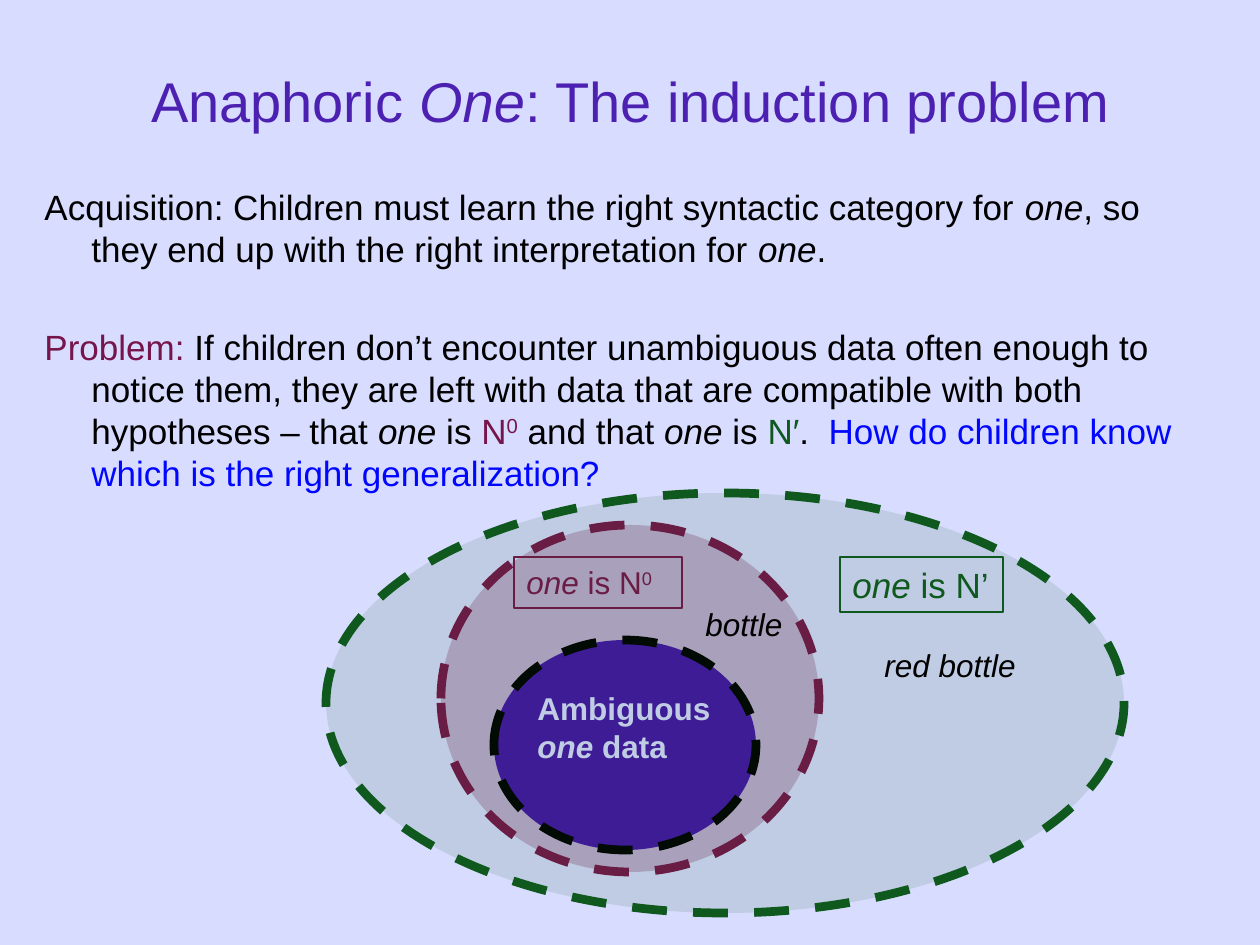
from dataclasses import dataclass
from typing import Optional

from lxml.etree import SubElement
from pptx import Presentation
from pptx.dml.color import RGBColor
from pptx.enum.dml import MSO_LINE
from pptx.enum.shapes import MSO_SHAPE
from pptx.enum.text import MSO_ANCHOR, PP_ALIGN
from pptx.oxml.ns import qn
from pptx.slide import Slide
from pptx.text.text import _Paragraph as Paragraph
from pptx.util import Emu, Pt

PIXELS_PER_INCH = 126


@dataclass(frozen=True)
class Theme:
    font: str = "Arial"
    background: str = "D8DCFF"
    title: str = "4C21B1"
    text: str = "000000"
    noun: str = "76154B"
    phrase: str = "0F591E"
    question: str = "0006FF"
    data: str = "4414A7"
    title_size: int = 32
    body_size: int = 20
    label_size: int = 18
    body_leading: int = 24
    body_gap: int = 32
    outline: float = 0.75
    dashes: int = 5


THEME = Theme()


@dataclass(frozen=True)
class Box:
    left: int
    top: int
    width: int
    height: int

    def emu(self) -> tuple[Emu, ...]:
        """Return the box as lengths in EMU."""
        return tuple(px(value) for value in (self.left, self.top, self.width, self.height))


@dataclass(frozen=True)
class Span:
    text: str
    italic: bool = False
    color: Optional[str] = None
    superscript: bool = False


@dataclass(frozen=True)
class Ring:
    box: Box
    fill: str
    line: str
    opacity: int = 100


@dataclass(frozen=True)
class Label:
    box: Box
    spans: tuple[Span, ...]
    color: str = THEME.text
    size: int = THEME.label_size
    bold: bool = False
    framed: bool = False
    wrap: bool = True


ONE = Span("one", italic=True)

TITLE = Label(
    Box(95, 21, 1071, 158),
    (Span("Anaphoric "), Span("One", italic=True), Span(": The induction problem")),
    THEME.title, THEME.title_size,
)
BODY_BOX = Box(32, 179, 1176, 305)
BODY = (
    (
        Span("Acquisition: Children must learn the right syntactic category for "), ONE,
        Span(", so they end up with the right interpretation for "), ONE, Span("."),
    ),
    (
        Span("Problem: ", color=THEME.noun),
        Span("If children don’t encounter unambiguous data often enough to notice them, they are "
             "left with data that are compatible with both hypotheses – that "),
        ONE, Span(" is "), Span("N", color=THEME.noun),
        Span("0", color=THEME.noun, superscript=True),
        Span(" and that "), ONE, Span(" is "), Span("N′", color=THEME.phrase), Span(".  "),
        Span("How do children know which is the right generalization?", color=THEME.question),
    ),
)
NOUN_RING = Ring(Box(441, 525, 378, 347), THEME.noun, THEME.noun, 25)
DATA_RING = Ring(Box(494, 640, 262, 210), THEME.data, THEME.text)
PHRASE_RING = Ring(Box(326, 493, 798, 420), THEME.phrase, THEME.phrase, 12)
INNER_LABELS = (
    Label(Box(525, 683, 221, 88), (Span("Ambiguous "), ONE, Span(" data")),
          THEME.background, bold=True),
    Label(Box(514, 557, 168, 51), (ONE, Span(" is N"), Span("0", superscript=True)),
          THEME.noun, framed=True),
)
OUTER_LABELS = (
    Label(Box(840, 557, 163, 55), (ONE, Span(" is N’")), THEME.phrase, THEME.body_size,
          framed=True, wrap=False),
    Label(Box(693, 599, 168, 50), (Span("bottle", italic=True),)),
    Label(Box(872, 640, 168, 50), (Span("red bottle", italic=True),)),
)


def px(value: int) -> Emu:
    """Turn pixels into EMU."""
    return Emu(round(value * 914400 / PIXELS_PER_INCH))


def rgb(color: str) -> RGBColor:
    """Turn a hex string into a colour."""
    return RGBColor.from_string(color)


def write(paragraph: Paragraph, spans: tuple[Span, ...], color: str, size: int,
          bold: bool = False) -> None:
    """Fill a paragraph with spans that share one font."""
    paragraph.font.name = THEME.font
    paragraph.font.size = Pt(size)
    paragraph.font.bold = bold
    paragraph.font.color.rgb = rgb(color)
    for span in spans:
        run = paragraph.add_run()
        run.text = span.text
        if span.italic:
            run.font.italic = True
        if span.color:
            run.font.color.rgb = rgb(span.color)
        if span.superscript:
            run.font._element.set("baseline", "30000")


def draw_label(slide: Slide, label: Label) -> Paragraph:
    """Draw a text box, framed if asked, and return its paragraph."""
    shape = slide.shapes.add_textbox(*label.box.emu())
    shape.text_frame.word_wrap = label.wrap
    if label.framed:
        shape.line.color.rgb = rgb(label.color)
        shape.line.width = Pt(THEME.outline)
    paragraph = shape.text_frame.paragraphs[0]
    write(paragraph, label.spans, label.color, label.size, label.bold)
    return paragraph


def draw_title(slide: Slide) -> None:
    """Draw the centred title."""
    paragraph = draw_label(slide, TITLE)
    paragraph.alignment = PP_ALIGN.CENTER
    slide.shapes[-1].text_frame.vertical_anchor = MSO_ANCHOR.MIDDLE


def draw_body(slide: Slide) -> None:
    """Draw the body paragraphs with hanging indents."""
    frame = slide.shapes.add_textbox(*BODY_BOX.emu()).text_frame
    frame.word_wrap = True
    for index, spans in enumerate(BODY):
        paragraph = frame.add_paragraph() if index else frame.paragraphs[0]
        paragraph.line_spacing = Pt(THEME.body_leading)
        paragraph.space_before = Pt(THEME.body_gap if index else 0)
        properties = paragraph._p.get_or_add_pPr()
        properties.set("marL", str(px(47)))
        properties.set("indent", str(-px(47)))
        write(paragraph, spans, THEME.text, THEME.body_size)


def draw_ring(slide: Slide, ring: Ring) -> None:
    """Draw a filled ellipse with a dashed outline."""
    shape = slide.shapes.add_shape(MSO_SHAPE.OVAL, *ring.box.emu())
    shape.shadow.inherit = False
    shape.fill.solid()
    shape.fill.fore_color.rgb = rgb(ring.fill)
    if ring.opacity < 100:
        color = shape._element.spPr.find(qn("a:solidFill")).find(qn("a:srgbClr"))
        SubElement(color, qn("a:alpha")).set("val", str(ring.opacity * 1000))
    shape.line.color.rgb = rgb(ring.line)
    shape.line.width = Pt(THEME.dashes)
    shape.line.dash_style = MSO_LINE.DASH


def main() -> None:
    """Build the slide and save it."""
    presentation = Presentation()
    presentation.slide_width, presentation.slide_height = px(1260), px(945)
    slide = presentation.slides.add_slide(presentation.slide_layouts[6])
    slide.background.fill.solid()
    slide.background.fill.fore_color.rgb = rgb(THEME.background)
    draw_body(slide)
    for ring in (NOUN_RING, DATA_RING):
        draw_ring(slide, ring)
    for label in INNER_LABELS:
        draw_label(slide, label)
    draw_ring(slide, PHRASE_RING)
    for label in OUTER_LABELS:
        draw_label(slide, label)
    draw_title(slide)
    presentation.save("out.pptx")


if __name__ == "__main__":
    main()
